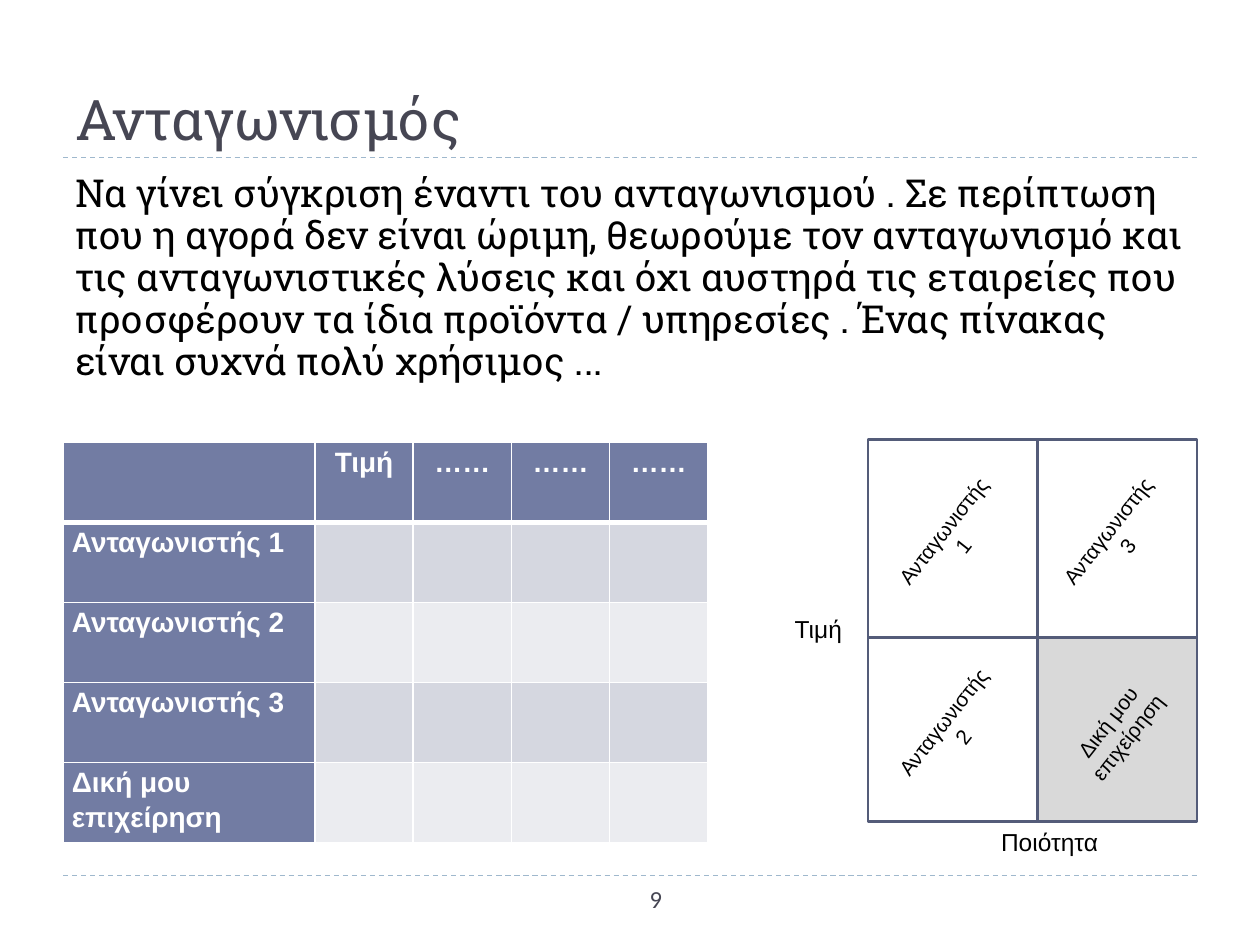
from dataclasses import dataclass

import lxml.etree
import pptx
import pptx.dml.color
import pptx.enum.dml
import pptx.enum.shapes
import pptx.enum.text
import pptx.oxml.ns
import pptx.util
from pptx.util import Cm

ALIGN = pptx.enum.text.PP_ALIGN
ANCHOR = pptx.enum.text.MSO_ANCHOR


@dataclass(frozen=True)
class Theme:
    """Colours, fonts and type sizes of the slide."""
    heading: str = "464653"
    ink: str = "000000"
    white: str = "FFFFFF"
    rule: str = "9FB8CD"
    header: str = "727CA3"
    bands: tuple = ("D5D7E0", "EBECF0")
    outline: str = "545C79"
    highlight: str = "D9D9D9"
    slab: str = "Roboto Slab"
    sans: str = "Arial"
    number: str = "Calibri"
    title_size: int = 32
    body_size: int = 22
    table_size: int = 16
    axis_size: int = 14
    label_size: int = 12


THEME = Theme()


def colour(code):
    """Return an RGB colour from its hex code."""
    return pptx.dml.color.RGBColor.from_string(code)


def write(frame, text, font=THEME.sans, size=THEME.axis_size, ink=THEME.ink,
          bold=False, align=ALIGN.LEFT, spacing=None, anchor=ANCHOR.TOP):
    """Write one formatted paragraph into a text frame."""
    frame.word_wrap = True
    frame.vertical_anchor = anchor
    para = frame.paragraphs[0]
    para.alignment = align
    para.space_before = pptx.util.Pt(0)
    if spacing:
        para.line_spacing = spacing
    span = para.add_run()
    span.text = text
    span.font.name = font
    span.font.size = pptx.util.Pt(size)
    span.font.bold = bold
    span.font.color.rgb = colour(ink)


def add_text(page, box, text, rotation=0, **style):
    """Add a text box at the given left, top, width and height."""
    shape = page.shapes.add_textbox(*map(Cm, box))
    shape.rotation = rotation
    write(shape.text_frame, text, **style)


def add_rule(page, left, top, width):
    """Draw a dashed horizontal rule."""
    rule = page.shapes.add_connector(
        pptx.enum.shapes.MSO_CONNECTOR.STRAIGHT,
        Cm(left), Cm(top), Cm(left + width), Cm(top))
    rule.line.color.rgb = colour(THEME.rule)
    rule.line.width = pptx.util.Pt(0.75)
    rule.line.dash_style = pptx.enum.dml.MSO_LINE.DASH
    lxml.etree.SubElement(rule.element.spPr, pptx.oxml.ns.qn("a:effectLst"))


def add_heading(page, box, text):
    """Place the title in its box with a rule along the bottom."""
    left, top, width, height = box
    add_rule(page, left, top + height, width)
    title = page.shapes.title
    title.left, title.top, title.width, title.height = map(Cm, box)
    title.text_frame.auto_size = pptx.enum.text.MSO_AUTO_SIZE.NONE
    write(title.text_frame, text, font=THEME.slab, size=THEME.title_size,
          ink=THEME.heading, anchor=ANCHOR.BOTTOM)


def add_footer(page, box, text):
    """Place the page number under a rule that spans the box."""
    left, top, width, height = box
    add_rule(page, left, top, width)
    add_text(page, (left + 4.85, top + 0.05, 14.2, height), text,
             font=THEME.number, ink=THEME.heading, align=ALIGN.CENTER)


def add_borders(cell, bottom):
    """Give a cell white borders, with its own width at the bottom."""
    properties = cell._tc.get_or_add_tcPr()
    widths = {"lnL": 1, "lnR": 1, "lnT": 1, "lnB": bottom}
    for place, (tag, points) in enumerate(widths.items()):
        line = lxml.etree.Element(pptx.oxml.ns.qn(f"a:{tag}"),
                                  w=str(pptx.util.Pt(points)))
        fill = lxml.etree.SubElement(line, pptx.oxml.ns.qn("a:solidFill"))
        lxml.etree.SubElement(fill, pptx.oxml.ns.qn("a:srgbClr"),
                              val=THEME.white)
        properties.insert(place, line)


def add_comparison(page, box, criteria, firms):
    """Add the table of firms against criteria, with blank banded cells."""
    left, top, width, height = box
    first = 5.08
    rows, columns = len(firms) + 1, len(criteria) + 1
    table = page.shapes.add_table(rows, columns, *map(Cm, box)).table
    for index, column in enumerate(table.columns):
        column.width = Cm((width - first) / len(criteria) if index else first)
    for row in table.rows:
        row.height = Cm(height / rows)
    for i in range(rows):
        for j in range(columns):
            cell = table.cell(i, j)
            heading = i == 0 or j == 0
            cell.fill.solid()
            cell.fill.fore_color.rgb = colour(
                THEME.header if heading else THEME.bands[(i - 1) % 2])
            add_borders(cell, bottom=1 if i else 3)
            cell.margin_left = cell.margin_right = Cm(0.18)
            cell.margin_top = cell.margin_bottom = Cm(0)
            if heading and i + j:
                write(cell.text_frame, firms[i - 1] if i else criteria[j - 1],
                      size=THEME.table_size, ink=THEME.white, bold=True,
                      align=ALIGN.LEFT if i else ALIGN.CENTER, spacing=1.15)


def add_quadrant(page, box, text, highlighted):
    """Draw one outlined quadrant with a slanted label at its centre."""
    left, top, width, height = box
    shape = page.shapes.add_shape(pptx.enum.shapes.MSO_SHAPE.RECTANGLE,
                                  *map(Cm, box))
    shape.shadow.inherit = False
    shape.line.color.rgb = colour(THEME.outline)
    shape.line.width = pptx.util.Pt(1.5)
    if highlighted:
        shape.fill.solid()
        shape.fill.fore_color.rgb = colour(THEME.highlight)
    else:
        shape.fill.background()
    wide, high = 3.12, 1.27
    add_text(page, (left + (width - wide) / 2, top + (height - high) / 2,
                    wide, high), text, rotation=308.1,
             size=THEME.label_size, align=ALIGN.CENTER)


def add_matrix(page, box, labels, axes):
    """Draw the positioning matrix with its two axis names."""
    left, top, width, height = box
    split_x, split_y = 3.42, 3.99
    columns = ((left, split_x), (left + split_x, width - split_x))
    rows = ((top, split_y), (top + split_y, height - split_y))
    for i, (y, high) in enumerate(rows):
        for j, (x, wide) in enumerate(columns):
            add_quadrant(page, (x, y, wide, high), labels[i][j],
                         highlighted=i == j == 1)
    vertical, horizontal = axes
    add_text(page, (left - 1.73, top + 3.4, 2.13, 0.86), vertical)
    add_text(page, (left + 1.3, top + height - 0.02, 4.72, 0.86), horizontal,
             align=ALIGN.CENTER)


def main():
    """Build the competition slide and save it."""
    deck = pptx.Presentation()
    deck.slide_width, deck.slide_height = Cm(25.4), Cm(19.05)
    page = deck.slides.add_slide(deck.slide_layouts[5])
    left, width = 1.27, 22.86
    rivals = [f"Ανταγωνιστής {number}" for number in (1, 2, 3)]
    own = "Δική μου επιχείρηση"
    add_heading(page, (left, 0.43, width, 2.75), "Ανταγωνισμός")
    add_text(page, (left, 3.38, width, 5),
             "Να γίνει σύγκριση έναντι του ανταγωνισμού . Σε περίπτωση που η "
             "αγορά δεν είναι ώριμη, θεωρούμε τον ανταγωνισμό και τις "
             "ανταγωνιστικές λύσεις και όχι αυστηρά τις εταιρείες που "
             "προσφέρουν τα ίδια προϊόντα / υπηρεσίες . Ένας πίνακας είναι "
             "συχνά πολύ χρήσιμος ...",
             font=THEME.slab, size=THEME.body_size, spacing=0.91)
    add_comparison(page, (left, 8.92, 13, 8.06),
                   ["Τιμή"] + ["……"] * 3, rivals + [own])
    add_matrix(page, (17.5, 8.86, 6.63, 7.7),
               ((rivals[0], rivals[2]), (rivals[1], own)),
               ("Τιμή", "Ποιότητα"))
    add_footer(page, (left, 17.65, width, 1.02), "9")
    deck.save("out.pptx")


if __name__ == "__main__":
    main()
